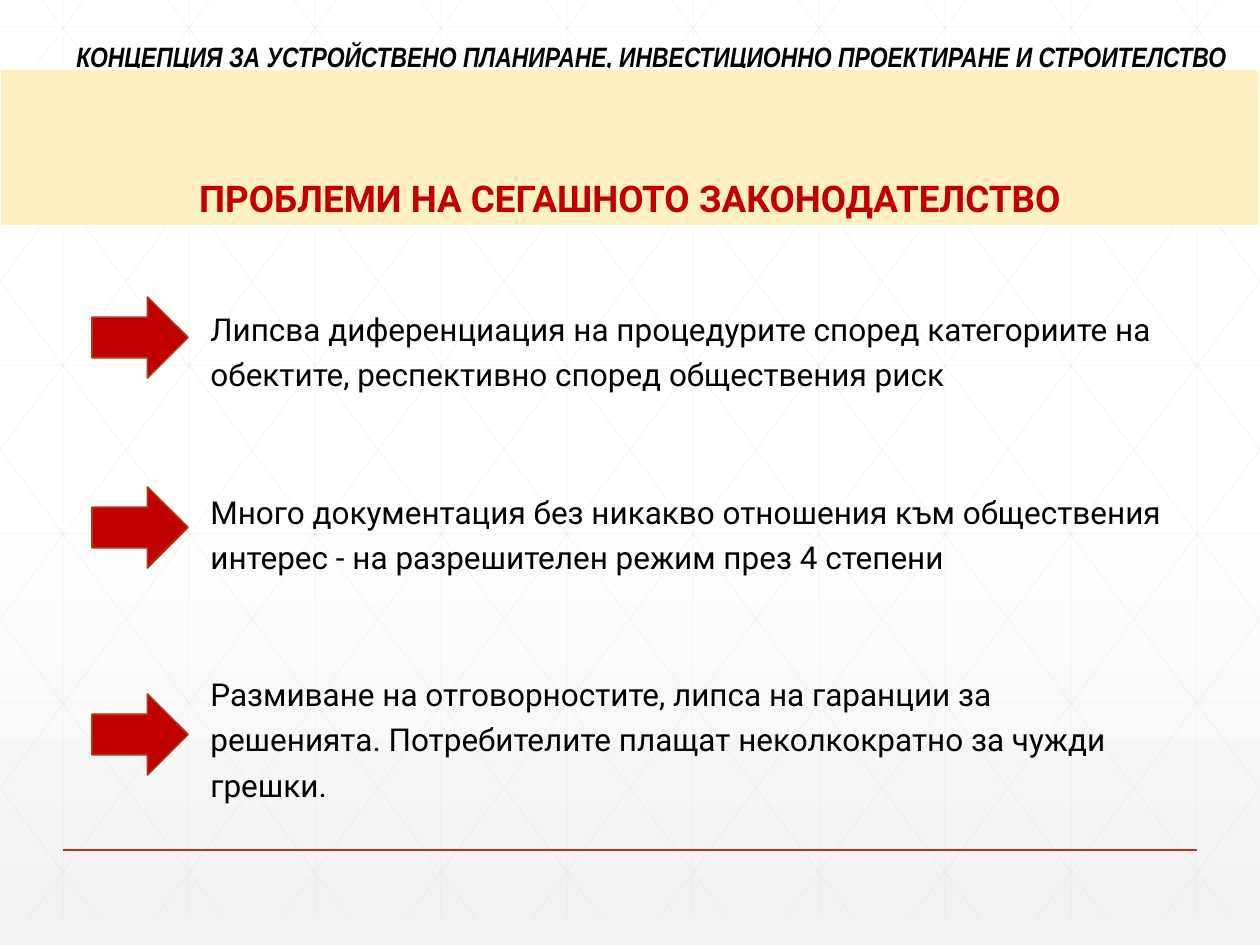
from pptx import Presentation
from pptx.dml.color import RGBColor
from pptx.enum.shapes import MSO_CONNECTOR, MSO_SHAPE
from pptx.enum.text import MSO_ANCHOR, PP_ALIGN
from pptx.oxml.ns import qn
from pptx.util import Emu, Pt
from lxml.etree import SubElement

WIDTH, HEIGHT = 1260, 945
GRID_BOTTOM, GRID_STEP, ROW_STEP = 919, 126, 169
DIAGONAL_START, DIAGONAL_RUN = 42, 686

WHITE = RGBColor(0xFF, 0xFF, 0xFF)
BLACK = RGBColor(0x00, 0x00, 0x00)
PALE_GRAY = RGBColor(0xF2, 0xF2, 0xF2)
GRID_GRAY = RGBColor(0xD9, 0xD9, 0xD9)
CREAM = RGBColor(0xFF, 0xF0, 0xC2)
RED = RGBColor(0xC0, 0x00, 0x00)
ARROW_EDGE = RGBColor(0xAC, 0x38, 0x19)
RULE_RED = RGBColor(0xB5, 0x35, 0x13)

HEADER = "КОНЦЕПЦИЯ ЗА УСТРОЙСТВЕНО ПЛАНИРАНЕ, ИНВЕСТИЦИОННО ПРОЕКТИРАНЕ И СТРОИТЕЛСТВО"
TITLE = "ПРОБЛЕМИ НА СЕГАШНОТО ЗАКОНОДАТЕЛСТВО"
PROBLEMS = [
    "Липсва диференциация на процедурите според категориите на обектите, "
    "респективно според обществения риск",
    "Много документация без никакво отношения към обществения интерес - "
    "на разрешителен режим през 4 степени",
    "Размиване на отговорностите, липса на гаранции за решенията. "
    "Потребителите плащат неколкократно за чужди грешки.",
]
ARROW_TOPS = [297, 487, 694]


def px(value):
    """Convert pixels to EMU."""
    return Emu(round(value * 914400 / 126))


def set_background(slide):
    """Fade the slide from white to pale gray at the bottom."""
    fill = slide.background.fill
    fill.gradient()
    fill.gradient_angle = 270
    for stop, position, color in zip(fill.gradient_stops, (0.49, 1), (WHITE, PALE_GRAY)):
        stop.position = position
        stop.color.rgb = color


def add_line(slide, start, end, color, width, opacity=100):
    """Add a straight line without a shadow."""
    line = slide.shapes.add_connector(MSO_CONNECTOR.STRAIGHT, *map(px, (*start, *end)))
    line.line.color.rgb = color
    line.line.width = Pt(width)
    properties = line._element.spPr
    if opacity < 100:
        color_element = properties.find(".//" + qn("a:srgbClr"))
        SubElement(color_element, qn("a:alpha")).set("val", str(opacity * 1000))
    SubElement(properties, qn("a:effectLst"))


def clipped_diagonal(top_x):
    """Return the ends of a falling diagonal cut at the slide sides."""
    left, right = max(top_x, 0), min(top_x + DIAGONAL_RUN, WIDTH)
    return [(x, round((x - top_x) * GRID_BOTTOM / DIAGONAL_RUN)) for x in (left, right)]


def add_grid(slide):
    """Add the faint lattice of upright, level and slanted lines."""
    lines = [((x, 0), (x, GRID_BOTTOM)) for x in range(63, WIDTH, GRID_STEP)]
    lines += [((0, y), (WIDTH, y)) for y in range(27, GRID_BOTTOM, ROW_STEP)]
    for index in range(-5, 10):
        diagonal = clipped_diagonal(DIAGONAL_START + index * GRID_STEP)
        lines += [diagonal, [(WIDTH - x, y) for x, y in diagonal]]
    for start, end in lines:
        add_line(slide, start, end, GRID_GRAY, 0.5, 25)


def add_shape(slide, kind, box, fill, edge, edge_width):
    """Add a filled and outlined preset shape."""
    shape = slide.shapes.add_shape(kind, *map(px, box))
    shape.shadow.inherit = False
    shape.fill.solid()
    shape.fill.fore_color.rgb = fill
    shape.line.color.rgb = edge
    shape.line.width = Pt(edge_width)
    return shape


def write_text(shape, texts, font_name, size, color, anchor=MSO_ANCHOR.TOP,
               align=PP_ALIGN.LEFT, spacing=1.0, gap=0, bold=False, italic=False):
    """Write one paragraph per text, parted by the gap in points."""
    frame = shape.text_frame
    frame.word_wrap = True
    frame.vertical_anchor = anchor
    for index, text in enumerate(texts):
        paragraph = frame.add_paragraph() if index else frame.paragraphs[0]
        paragraph.alignment = align
        paragraph.line_spacing = spacing
        paragraph.space_before = Pt(gap if index else 0)
        run = paragraph.add_run()
        run.text = text
        font = run.font
        font.name, font.size, font.bold, font.italic = font_name, Pt(size), bold, italic
        font.color.rgb = color


def add_text(slide, box, texts, *style, **options):
    """Add a text box with styled paragraphs."""
    write_text(slide.shapes.add_textbox(*map(px, box)), texts, *style, **options)


def main():
    """Build and save the slide."""
    presentation = Presentation()
    presentation.slide_width, presentation.slide_height = px(WIDTH), px(HEIGHT)
    slide = presentation.slides.add_slide(presentation.slide_layouts[6])
    set_background(slide)
    add_grid(slide)
    add_line(slide, (63, 850), (1197, 850), RULE_RED, 1)
    add_text(slide, (64, 33, 1196, 47), [HEADER], "Arial Narrow", 16, BLACK,
             bold=True, italic=True)
    banner = add_shape(slide, MSO_SHAPE.RECTANGLE, (0, 69, WIDTH, 157), CREAM, WHITE, 0.75)
    write_text(banner, [TITLE], "Roboto", 21, RED, anchor=MSO_ANCHOR.BOTTOM,
               align=PP_ALIGN.CENTER, spacing=1.5, bold=True)
    add_text(slide, (198, 297, 977, 512), PROBLEMS, "Roboto", 18, BLACK,
             anchor=MSO_ANCHOR.MIDDLE, spacing=1.2, gap=52.5)
    for top in ARROW_TOPS:
        add_shape(slide, MSO_SHAPE.RIGHT_ARROW, (92, top, 96, 81), RED, ARROW_EDGE, 1)
    presentation.save("out.pptx")


if __name__ == "__main__":
    main()
